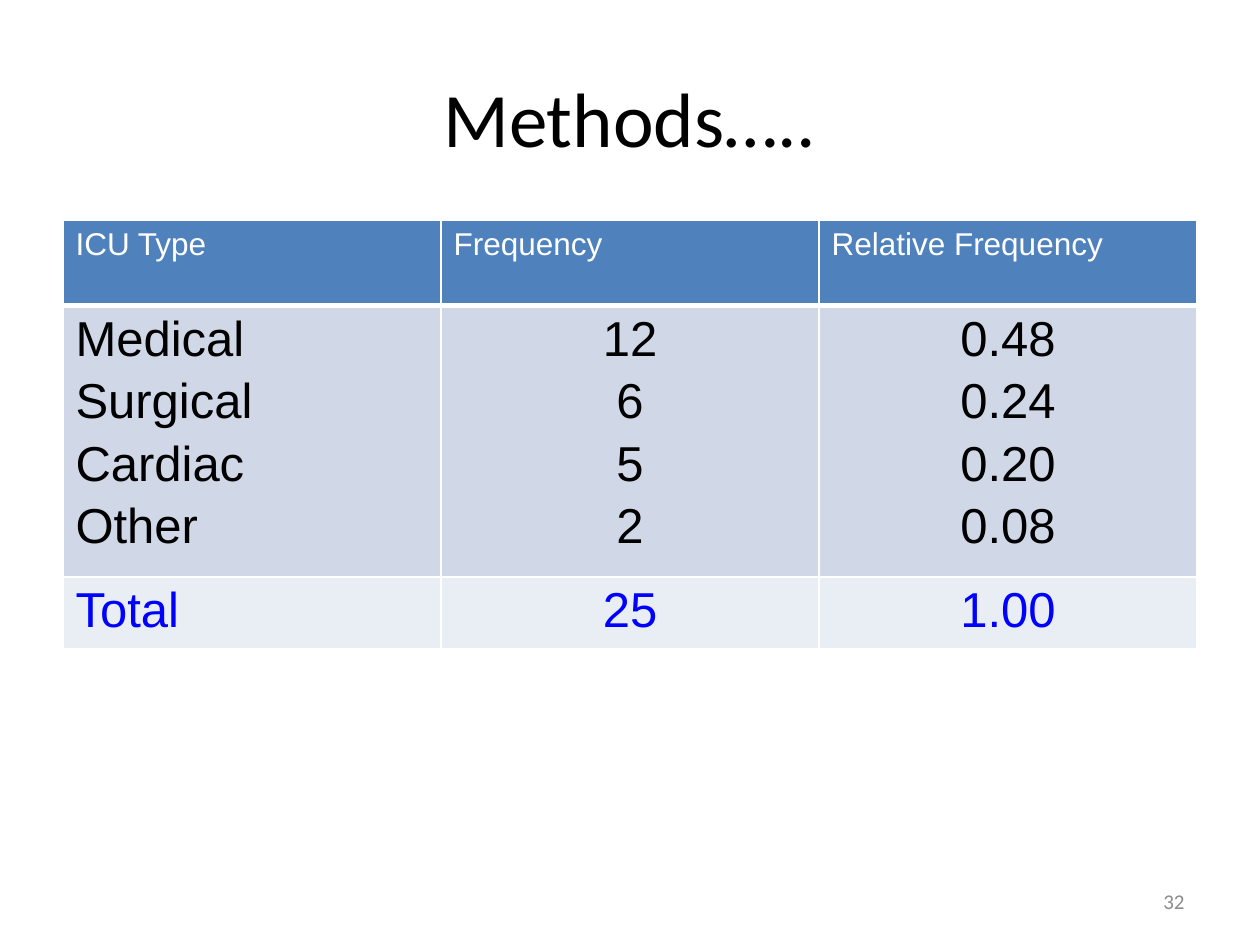
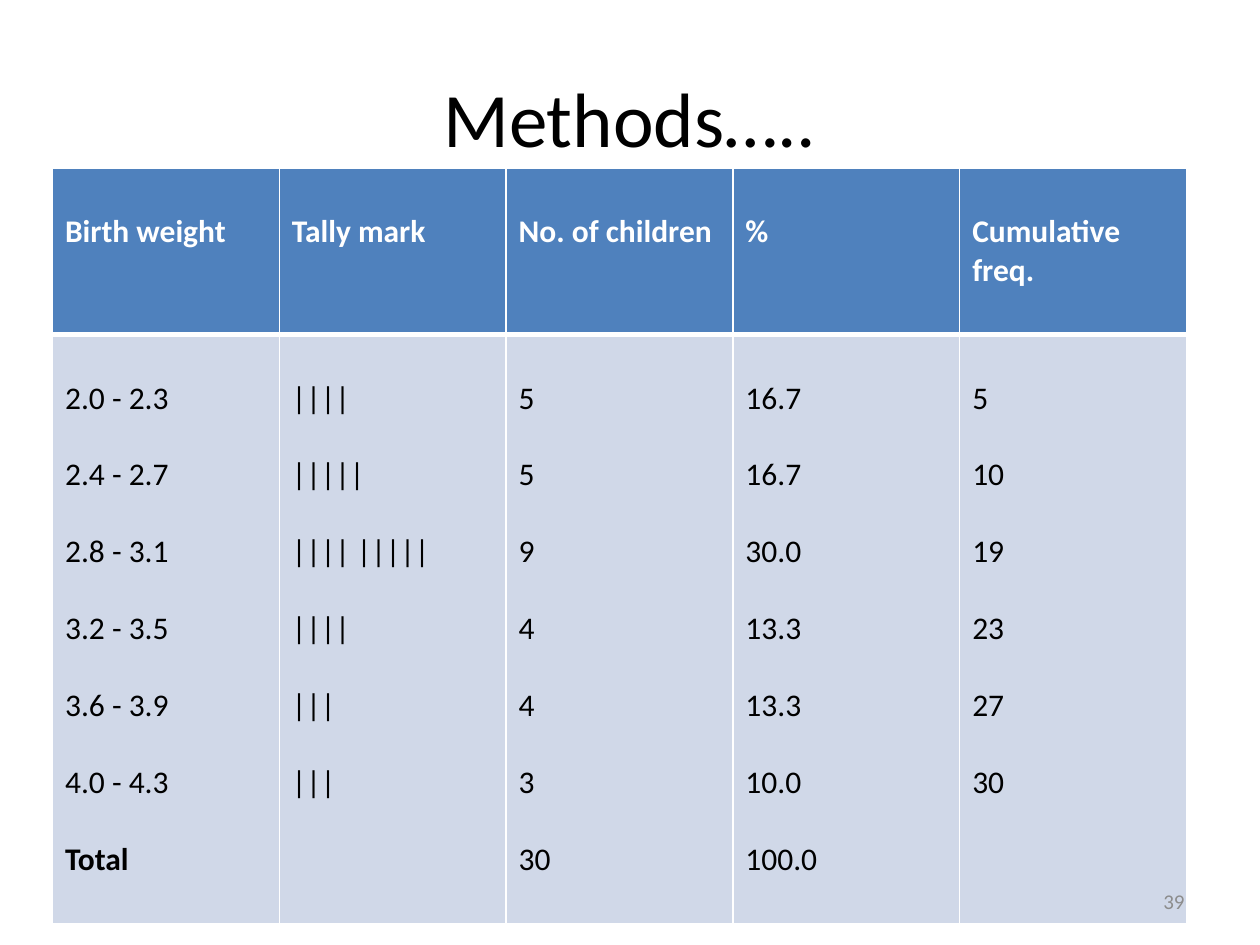
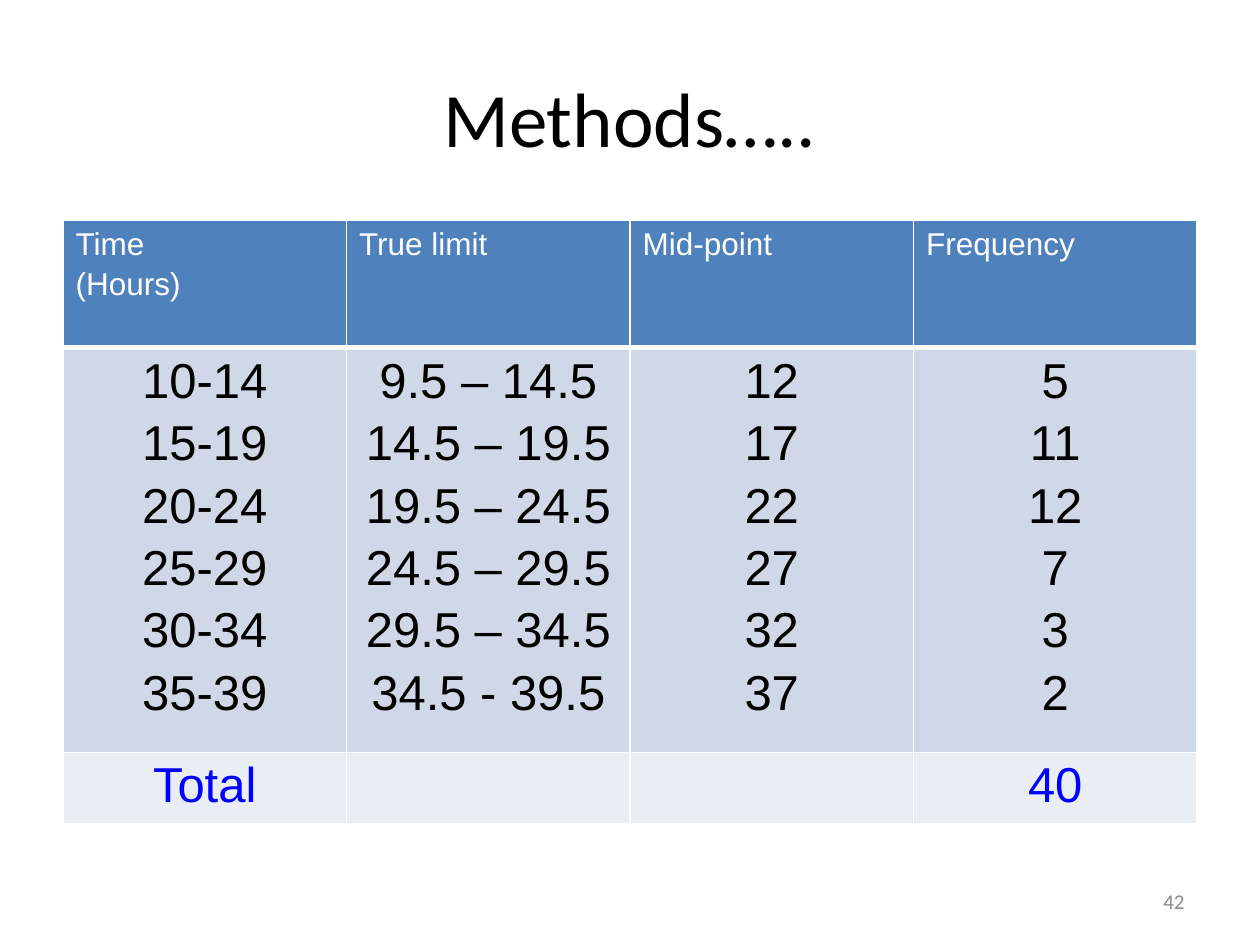
from lxml import etree
from pptx import Presentation
from pptx.dml.color import RGBColor
from pptx.enum.text import MSO_ANCHOR, PP_ALIGN
from pptx.oxml.ns import qn
from pptx.util import Pt

LEFT, CENTER, RIGHT = PP_ALIGN.LEFT, PP_ALIGN.CENTER, PP_ALIGN.RIGHT
MIDDLE = MSO_ANCHOR.MIDDLE

WHITE, BLACK, BLUE, GREY = "FFFFFF", "000000", "0000FF", "8C8C8C"
HEADER_FILL, BODY_FILL, TOTAL_FILL = "4F81BD", "D0D8E8", "E9EDF4"
TITLE = "Methods….."
TABLE_WIDTH = 648

ARIAL_STYLE = dict(font="Arial", body_size=28, header_bold=False, gap=0.16, top_inset=3.6)
CALIBRI_STYLE = dict(font="Calibri", body_size=18, header_bold=True, gap=1.22, top_inset=25.6)

SLIDES = [
    dict(
        number="32", left=36, top=126, heights=(48.6, 149.2, 38), style=ARIAL_STYLE,
        aligns=(LEFT, CENTER, CENTER),
        header=["ICU Type", "Frequency", "Relative Frequency"],
        body=[
            ("Medical", "12", "0.48"),
            ("Surgical", "6", "0.24"),
            ("Cardiac", "5", "0.20"),
            ("Other", "2", "0.08"),
        ],
        total=["Total", "25", "1.00"],
    ),
    dict(
        number="39", left=30, top=96, heights=(95, 336.6), style=CALIBRI_STYLE,
        aligns=(LEFT,) * 5,
        header=["Birth weight", "Tally mark", "No. of children", "%", "Cumulative freq."],
        body=[
            ("2.0 - 2.3", "||||", "5", "16.7", "5"),
            ("2.4 - 2.7", "|||||", "5", "16.7", "10"),
            ("2.8 - 3.1", "|||| |||||", "9", "30.0", "19"),
            ("3.2 - 3.5", "||||", "4", "13.3", "23"),
            ("3.6 - 3.9", "|||", "4", "13.3", "27"),
            ("4.0 - 4.3", "|||", "3", "10.0", "30"),
            ("Total", "", "30", "100.0", ""),
        ],
        total=None,
    ),
    dict(
        number="42", left=36, top=126, heights=(72.6, 222.8, 37.8), style=ARIAL_STYLE,
        aligns=(CENTER,) * 4,
        header=["Time\n(Hours)", "True limit", "Mid-point", "Frequency"],
        body=[
            ("10-14", "9.5 – 14.5", "12", "5"),
            ("15-19", "14.5 – 19.5", "17", "11"),
            ("20-24", "19.5 – 24.5", "22", "12"),
            ("25-29", "24.5 – 29.5", "27", "7"),
            ("30-34", "29.5 – 34.5", "32", "3"),
            ("35-39", "34.5 - 39.5", "37", "2"),
        ],
        total=["Total", "", "", "40"],
    ),
]


def rgb(color):
    return RGBColor.from_string(color)


def write(tf, text, font, size, color, align=LEFT, bold=False, gap=0):
    tf.text = text
    for i, p in enumerate(tf.paragraphs):
        p.alignment = align
        if i:
            p.space_before = Pt(round(gap * size, 2))
        for r in p.runs:
            r.font.name = font
            r.font.size = Pt(size)
            r.font.bold = bold or (r.text == "Total" and i > 0)
            r.font.color.rgb = rgb(color)


def add_text(s, box, text, size, color, align):
    tf = s.shapes.add_textbox(*map(Pt, box)).text_frame
    tf.word_wrap = True
    tf.vertical_anchor = MIDDLE
    write(tf, text, "Calibri", size, color, align)


def set_borders(cell, bottom):
    tcPr = cell._tc.get_or_add_tcPr()
    for side, width in (("L", 1), ("R", 1), ("T", 1), ("B", bottom)):
        ln = etree.SubElement(tcPr, qn(f"a:ln{side}"), w=str(Pt(width)))
        fill = etree.SubElement(ln, qn("a:solidFill"))
        etree.SubElement(fill, qn("a:srgbClr"), val=WHITE)


def add_frequency_table(s, data):
    style, header = data["style"], data["header"]
    left_aligns = (LEFT,) * len(header)
    body = ["\n".join(column).rstrip("\n") for column in zip(*data["body"])]
    size = style["body_size"]
    bands = [
        (header, HEADER_FILL, WHITE, 18, left_aligns, style["header_bold"], 3),
        (body, BODY_FILL, BLACK, size, data["aligns"], False, 1),
    ]
    if data["total"]:
        bands.append((data["total"], TOTAL_FILL, BLUE, size, data["aligns"], False, 1))

    heights = data["heights"]
    box = (data["left"], data["top"], TABLE_WIDTH, sum(heights))
    table = s.shapes.add_table(len(bands), len(header), *map(Pt, box)).table
    for column in table.columns:
        column.width = Pt(TABLE_WIDTH / len(header))
    for row, height, band in zip(table.rows, heights, bands):
        row.height = Pt(height)
        texts, fill, color, size, aligns, bold, bottom = band
        for cell, text, align in zip(row.cells, texts, aligns):
            set_borders(cell, bottom)
            cell.fill.solid()
            cell.fill.fore_color.rgb = rgb(fill)
            cell.margin_top = Pt(style["top_inset"])
            write(cell.text_frame, text, style["font"], size, color, align, bold, style["gap"])


def main():
    prs = Presentation()
    prs.slide_width, prs.slide_height = Pt(720), Pt(540)
    for data in SLIDES:
        s = prs.slides.add_slide(prs.slide_layouts[6])
        add_text(s, (36, 21.6, 648, 90), TITLE, 44, BLACK, CENTER)
        add_frequency_table(s, data)
        add_text(s, (516, 500.5, 168, 28.75), data["number"], 12, GREY, RIGHT)
    prs.save("out.pptx")


if __name__ == "__main__":
    main()
